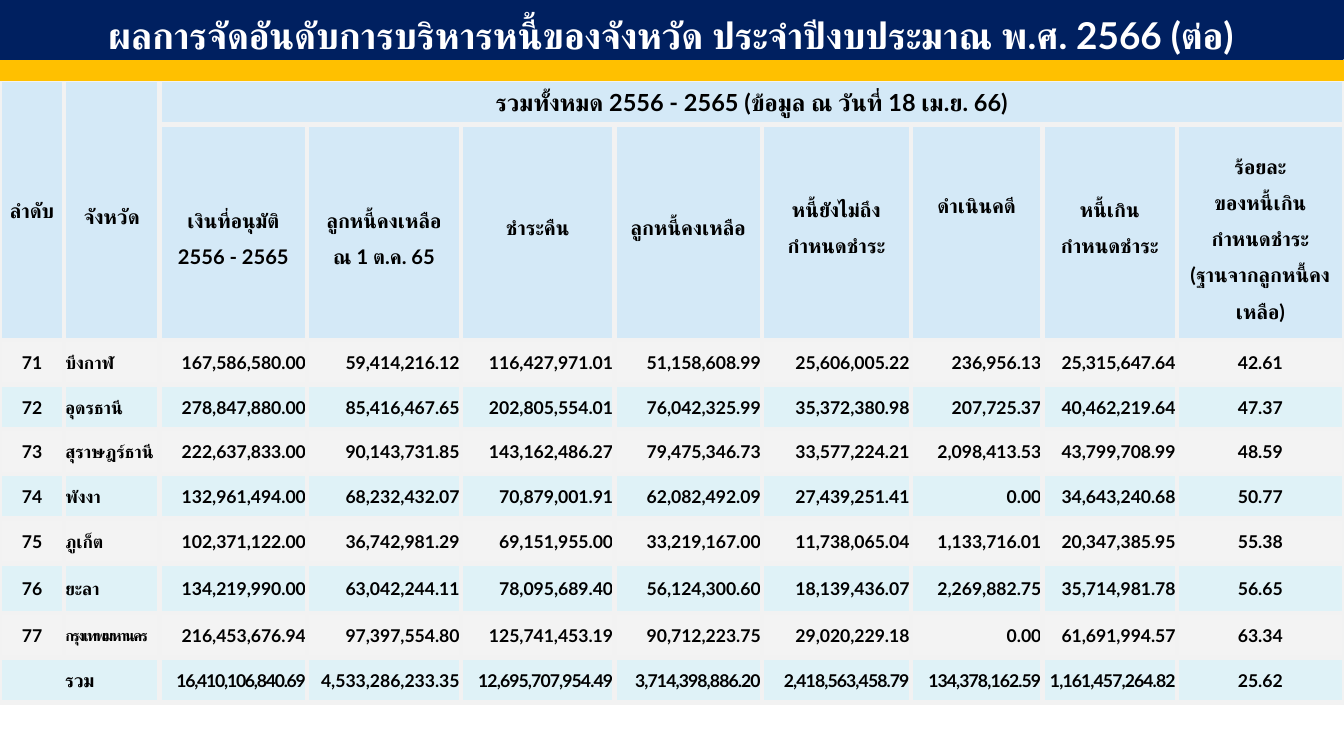
from lxml.etree import SubElement
from pptx import Presentation
from pptx.dml.color import RGBColor
from pptx.enum.shapes import MSO_SHAPE
from pptx.enum.text import MSO_ANCHOR, MSO_AUTO_SIZE, PP_ALIGN
from pptx.oxml.ns import qn
from pptx.util import Inches, Pt

NAVY = RGBColor(0x00, 0x20, 0x60)
GOLD = RGBColor(0xFF, 0xC0, 0x00)
WHITE = RGBColor(0xFF, 0xFF, 0xFF)
BLACK = RGBColor(0x00, 0x00, 0x00)
HEAD_BLUE = RGBColor(0xCA, 0xE4, 0xF6)
BAND_BLUE = RGBColor(0xD7, 0xEF, 0xF5)
GREY = RGBColor(0xF2, 0xF2, 0xF2)

FONT = "Lato"
WIDTH, HEIGHT = 11.11, 6.25
TITLE_END, TABLE_TOP = 0.5, 0.66
COLS = [0.53, 0.79, 1.22, 1.27, 1.27, 1.22, 1.23, 1.09, 1.11, 1.38]
ROW = 0.37
ROWS = [ROW, 1.78] + [ROW] * 5 + [0.41] + [ROW] * 2
ALIGNS = [PP_ALIGN.CENTER, PP_ALIGN.LEFT] + [PP_ALIGN.RIGHT] * 7 + [PP_ALIGN.CENTER]

TITLE = "ผลการจัดอันดับการบริหารหนี้ของจังหวัด ประจำปีงบประมาณ พ.ศ. 2566 (ต่อ)"
PERIOD = "รวมทั้งหมด 2556 - 2565 (ข้อมูล ณ วันที่ 18 เม.ย. 66)"
LIFT = 0.18
HEADS = [
    ("เงินที่อนุมัติ\n2556 - 2565", {}),
    ("ลูกหนี้คงเหลือ\nณ 1 ต.ค. 65", {}),
    ("ชำระคืน", {"bottom": LIFT}),
    ("ลูกหนี้คงเหลือ", {"bottom": LIFT}),
    ("หนี้ยังไม่ถึง\nกำหนดชำระ", {"bottom": LIFT}),
    ("ดำเนินคดี", {"top": 0.57, "anchor": MSO_ANCHOR.TOP, "spacing": 1}),
    ("หนี้เกิน\nกำหนดชำระ", {"bottom": LIFT}),
    ("ร้อยละ\nของหนี้เกิน\nกำหนดชำระ\n(ฐานจากลูกหนี้คงเหลือ)", {}),
]
PROVINCES = [
    "71 บึงกาฬ 167,586,580.00 59,414,216.12 116,427,971.01 51,158,608.99 25,606,005.22 236,956.13 25,315,647.64 42.61",
    "72 อุดรธานี 278,847,880.00 85,416,467.65 202,805,554.01 76,042,325.99 35,372,380.98 207,725.37 40,462,219.64 47.37",
    "73 สุราษฎร์ธานี 222,637,833.00 90,143,731.85 143,162,486.27 79,475,346.73 33,577,224.21 2,098,413.53 43,799,708.99 48.59",
    "74 พังงา 132,961,494.00 68,232,432.07 70,879,001.91 62,082,492.09 27,439,251.41 0.00 34,643,240.68 50.77",
    "75 ภูเก็ต 102,371,122.00 36,742,981.29 69,151,955.00 33,219,167.00 11,738,065.04 1,133,716.01 20,347,385.95 55.38",
    "76 ยะลา 134,219,990.00 63,042,244.11 78,095,689.40 56,124,300.60 18,139,436.07 2,269,882.75 35,714,981.78 56.65",
    "77 กรุงเทพมหานคร 216,453,676.94 97,397,554.80 125,741,453.19 90,712,223.75 29,020,229.18 0.00 61,691,994.57 63.34",
]
TOTALS = "16,410,106,840.69 4,533,286,233.35 12,695,707,954.49 3,714,398,886.20 2,418,563,458.79 134,378,162.59 1,161,457,264.82 25.62"
TOTAL_TRACKING = [-0.7, 0] + [-0.5] * 5 + [0]


def write(tf, text, size=10.5, color=BLACK, align=PP_ALIGN.CENTER, spacing=1, tracking=0):
    for i, line in enumerate(text.split("\n")):
        p = tf.paragraphs[0] if i == 0 else tf.add_paragraph()
        p.alignment = align
        p.line_spacing = spacing
        r = p.add_run()
        r.text = line
        r.font.name = FONT
        r.font.size = Pt(size)
        r.font.bold = True
        r.font.color.rgb = color
        props = r.font._element
        SubElement(props, qn("a:cs"), typeface=FONT)
        if tracking:
            props.set("spc", str(round(tracking * 100)))


def paint(sp, color):
    sp.fill.solid()
    sp.fill.fore_color.rgb = color
    sp.line.color.rgb = color
    sp.line.width = Pt(1)


def place(sp, left, top, width, height):
    sp.left, sp.top, sp.width, sp.height = map(Inches, (left, top, width, height))


def add_title(slide):
    sp = slide.shapes.title
    place(sp, -0.01, -0.02, WIDTH, TITLE_END + 0.01)
    paint(sp, NAVY)
    tf = sp.text_frame
    tf.auto_size = MSO_AUTO_SIZE.NONE
    tf.word_wrap = True
    tf.vertical_anchor = MSO_ANCHOR.MIDDLE
    write(tf, TITLE, size=22, color=WHITE, spacing=1.3)


def add_stripe(slide):
    sp = slide.shapes.add_shape(MSO_SHAPE.RECTANGLE, 0, 0, 0, 0)
    place(sp, 0, TITLE_END, WIDTH, TABLE_TOP - TITLE_END)
    paint(sp, GOLD)
    sp.shadow.inherit = False


def style_cell(cell, color, alpha):
    cell.margin_left = cell.margin_right = cell.margin_top = Inches(0.01)
    cell.margin_bottom = 0
    cell.vertical_anchor = MSO_ANCHOR.MIDDLE
    tc_pr = cell._tc.get_or_add_tcPr()
    for side in ("lnL", "lnR", "lnT", "lnB"):
        ln = SubElement(tc_pr, qn(f"a:{side}"), w=str(Pt(3)))
        fill = SubElement(ln, qn("a:solidFill"))
        SubElement(fill, qn("a:srgbClr"), val=str(GREY))
    cell.fill.solid()
    cell.fill.fore_color.rgb = color
    clr = tc_pr.find(f"{qn('a:solidFill')}/{qn('a:srgbClr')}")
    SubElement(clr, qn("a:alpha"), val=str(alpha * 1000))


def write_head(cell, text, top=0.01, bottom=0, anchor=MSO_ANCHOR.MIDDLE, spacing=1.5, size=12):
    cell.margin_top, cell.margin_bottom = Inches(top), Inches(bottom)
    cell.vertical_anchor = anchor
    write(cell.text_frame, text, size=size, spacing=spacing)


def add_table(slide):
    frame = slide.shapes.add_table(len(ROWS), len(COLS), 0, Inches(TABLE_TOP),
                                   Inches(sum(COLS)), Inches(sum(ROWS)))
    table = frame.table
    table.first_row = table.horz_banding = False
    for column, width in zip(table.columns, COLS):
        column.width = Inches(width)
    for i, (row, height) in enumerate(zip(table.rows, ROWS)):
        row.height = Inches(height)
        color, alpha = (HEAD_BLUE, 80) if i < 2 else (BAND_BLUE, 80) if i % 2 else (GREY, 90)
        for cell in row.cells:
            style_cell(cell, color, alpha)
    return table


def fill_heads(table):
    for col, (text, spacing) in enumerate([("ลำดับ", 1), ("จังหวัด", 1.5)]):
        table.cell(0, col).merge(table.cell(1, col))
        write_head(table.cell(0, col), text, spacing=spacing)
    table.cell(0, 2).merge(table.cell(0, len(COLS) - 1))
    write_head(table.cell(0, 2), PERIOD, size=14, spacing=1)
    for col, (text, layout) in enumerate(HEADS, 2):
        write_head(table.cell(1, col), text, **layout)


def fill_body(table):
    for row, province in enumerate(PROVINCES, 2):
        for col, text in enumerate(province.split()):
            tight = {"size": 9, "tracking": -1} if text == "กรุงเทพมหานคร" else {}
            write(table.cell(row, col).text_frame, text, align=ALIGNS[col], **tight)
    last = len(ROWS) - 1
    table.cell(last, 0).merge(table.cell(last, 1))
    write(table.cell(last, 0).text_frame, "รวม", size=11)
    for col, (text, tracking) in enumerate(zip(TOTALS.split(), TOTAL_TRACKING), 2):
        write(table.cell(last, col).text_frame, text, align=ALIGNS[col], tracking=tracking)


def main():
    prs = Presentation()
    prs.slide_width, prs.slide_height = Inches(WIDTH), Inches(HEIGHT)
    slide = prs.slides.add_slide(prs.slide_layouts[5])
    add_title(slide)
    table = add_table(slide)
    fill_heads(table)
    fill_body(table)
    add_stripe(slide)
    prs.save("out.pptx")


if __name__ == "__main__":
    main()
